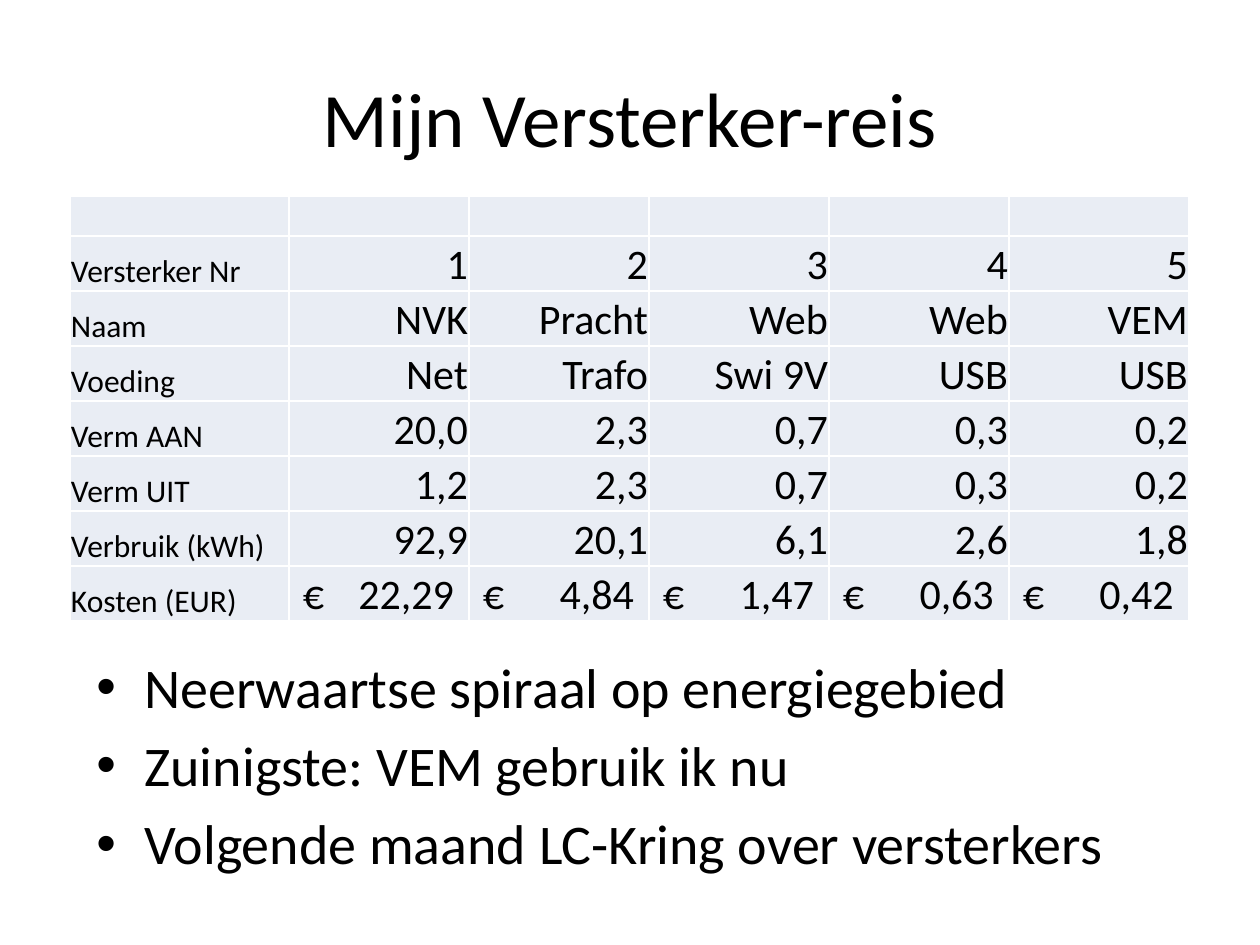
from dataclasses import dataclass

from lxml.etree import SubElement
from pptx import Presentation
from pptx.dml.color import RGBColor
from pptx.enum.text import MSO_ANCHOR, PP_ALIGN
from pptx.oxml.ns import qn
from pptx.util import Emu, Pt

PX = 914400 // 126


def px(n: int) -> Emu:
    return Emu(n * PX)


@dataclass(frozen=True)
class Theme:
    font: str = "Calibri"
    ink: RGBColor = RGBColor(0, 0, 0)
    fill: RGBColor = RGBColor(0xE9, 0xED, 0xF4)
    rule: str = "FFFFFF"
    title: int = 44
    body: int = 32
    value: int = 24
    label: int = 18
    blank: int = 10


@dataclass(frozen=True)
class Box:
    left: int
    top: int
    width: int
    height: int


@dataclass(frozen=True)
class Row:
    label: str
    values: tuple[str, ...]
    money: bool = False


THEME = Theme()
TITLE = Box(63, 38, 1134, 157)
GRID = Box(70, 196, 1119, 425)
LIST = Box(84, 646, 1134, 268)
LABEL_W, VALUE_W = 219, 180
BLANK_H, ROW_H = 40, 55
EURO_X, EURO_TAB = 14, 151
INDENT = 48

ROWS = (
    Row("", ("",) * 5),
    Row("Versterker Nr", ("1", "2", "3", "4", "5")),
    Row("Naam", ("NVK", "Pracht", "Web", "Web", "VEM")),
    Row("Voeding", ("Net", "Trafo", "Swi 9V", "USB", "USB")),
    Row("Verm AAN", ("20,0", "2,3", "0,7", "0,3", "0,2")),
    Row("Verm UIT", ("1,2", "2,3", "0,7", "0,3", "0,2")),
    Row("Verbruik (kWh)", ("92,9", "20,1", "6,1", "2,6", "1,8")),
    Row("Kosten (EUR)", ("22,29", "4,84", "1,47", "0,63", "0,42"), money=True),
)
POINTS = (
    "Neerwaartse spiraal op energiegebied",
    "Zuinigste: VEM gebruik ik nu",
    "Volgende maand LC-Kring over versterkers",
)


def style(para, size: int, align=PP_ALIGN.LEFT) -> None:
    para.alignment = align
    font = para.font
    font.name, font.size = THEME.font, Pt(size)
    font.color.rgb = THEME.ink


def place(shape, box: Box) -> None:
    shape.left, shape.top = px(box.left), px(box.top)
    shape.width, shape.height = px(box.width), px(box.height)


def edge(cell) -> None:
    """Draw a thin rule on all four sides of a cell."""
    props = cell._tc.get_or_add_tcPr()
    for side in ("lnL", "lnR", "lnT", "lnB"):
        line = SubElement(props, qn(f"a:{side}"), w=str(Pt(1)))
        solid = SubElement(line, qn("a:solidFill"))
        SubElement(solid, qn("a:srgbClr"), val=THEME.rule)


def fill_cell(cell, text: str, size: int, align, money: bool = False) -> None:
    edge(cell)
    cell.fill.solid()
    cell.fill.fore_color.rgb = THEME.fill
    cell.vertical_anchor = MSO_ANCHOR.BOTTOM
    cell.margin_left = px(EURO_X if money else 1)
    cell.margin_right = cell.margin_top = px(1)
    cell.margin_bottom = 0
    para = cell.text_frame.paragraphs[0]
    if money:
        # The amount lines up on a right tab after the euro sign
        tabs = SubElement(para._p.get_or_add_pPr(), qn("a:tabLst"))
        SubElement(tabs, qn("a:tab"), pos=str(px(EURO_TAB)), algn="r")
        text = f"€\t{text}"
    if text:
        para.add_run().text = text
    style(para, size if text else THEME.blank, align)


def draw_grid(slide, box: Box, rows: tuple[Row, ...]) -> None:
    cols = 1 + len(rows[0].values)
    frame = slide.shapes.add_table(len(rows), cols, 0, 0, px(box.width), px(box.height))
    place(frame, box)
    table = frame.table
    table.first_row = table.horz_banding = False
    for i, col in enumerate(table.columns):
        col.width = px(VALUE_W if i else LABEL_W)
    for i, row in enumerate(rows):
        table.rows[i].height = px(ROW_H if i else BLANK_H)
        fill_cell(table.cell(i, 0), row.label, THEME.label, PP_ALIGN.LEFT)
        align = PP_ALIGN.LEFT if row.money else PP_ALIGN.RIGHT
        for j, value in enumerate(row.values, 1):
            fill_cell(table.cell(i, j), value, THEME.value, align, row.money)


def draw_list(slide, box: Box, points: tuple[str, ...]) -> None:
    shape = slide.shapes.add_textbox(0, 0, 0, 0)
    place(shape, box)
    frame = shape.text_frame
    frame.word_wrap = True
    for i, point in enumerate(points):
        para = frame.add_paragraph() if i else frame.paragraphs[0]
        para.add_run().text = point
        props = para._p.get_or_add_pPr()
        props.set("marL", str(px(INDENT)))
        props.set("indent", str(-px(INDENT)))
        SubElement(props, qn("a:buFont"), typeface="Arial")
        SubElement(props, qn("a:buChar"), char="•")
        para.space_before = Pt(6.4)
        style(para, THEME.body)


def main() -> None:
    deck = Presentation()
    deck.slide_width, deck.slide_height = px(1260), px(945)
    slide = deck.slides.add_slide(deck.slide_layouts[5])

    # Title
    title = slide.shapes.title
    place(title, TITLE)
    title.text_frame.text = "Mijn Versterker-reis"
    title.text_frame.vertical_anchor = MSO_ANCHOR.MIDDLE
    style(title.text_frame.paragraphs[0], THEME.title, PP_ALIGN.CENTER)

    # Table of amplifiers
    draw_grid(slide, GRID, ROWS)

    # Closing points
    draw_list(slide, LIST, POINTS)

    deck.save("out.pptx")


if __name__ == "__main__":
    main()
